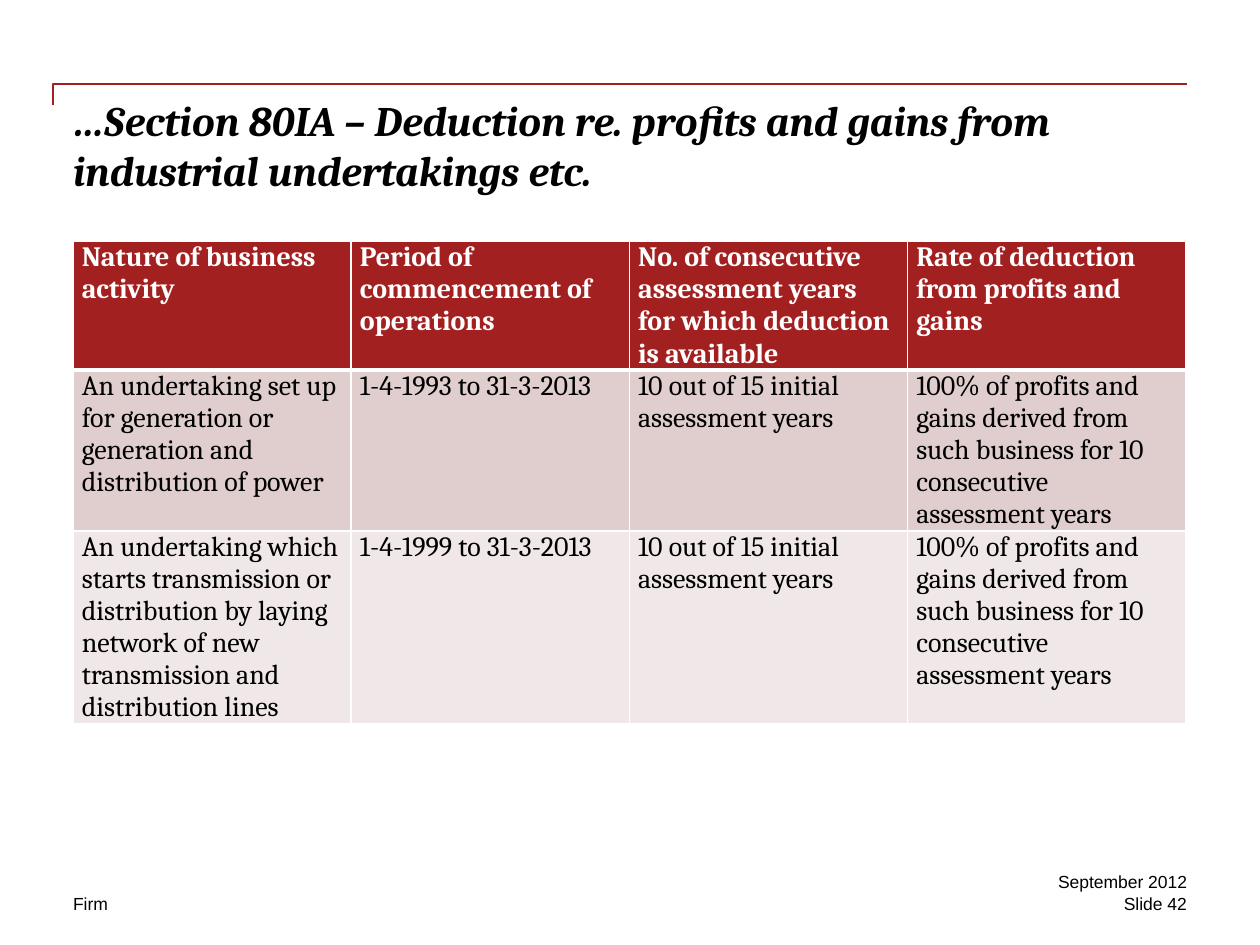
from dataclasses import dataclass

import pptx
import pptx.dml.color
import pptx.enum.text
import pptx.oxml
import pptx.oxml.ns
import pptx.util
from pptx.util import Inches

COLORS = {"red": "A32020", "rose": "E0CDCD", "pale": "F0E8E8",
          "white": "FFFFFF", "black": "000000"}
ALIGN = pptx.enum.text.PP_ALIGN
W, H = 10, 7.5

# Grid: content spans the margins, twelfths of an inch set the rows
LEFT, RIGHT = 0.58, 9.42
UNIT = 1 / 12
CONTENT_W = RIGHT - LEFT - 0.01


@dataclass
class Footer:
    text: str
    left: float
    row: int
    width: float
    align: ALIGN


@dataclass
class RowStyle:
    fill: str
    color: str
    bold: bool
    top: int
    bottom: int


FOOTERS = [
    Footer("Firm", LEFT, 85, 2.83, ALIGN.LEFT),
    Footer("Slide 42", 7.75, 85, 1.67, ALIGN.RIGHT),
    Footer("September 2012", 7.75, 83, 1.67, ALIGN.RIGHT),
]

YEARS = "10 out of 15 initial assessment years"
RATE = ("100% of profits and gains derived from such business "
        "for 10 consecutive assessment years")
ROWS = [
    ["Nature of business activity",
     "Period of commencement of operations",
     "No. of consecutive assessment years for which deduction is available",
     "Rate of deduction from profits and gains"],
    ["An undertaking set up for generation or generation and distribution of power",
     "1-4-1993 to 31-3-2013", YEARS, RATE],
    ["An undertaking which starts transmission or distribution by laying network "
     "of new transmission and distribution lines",
     "1-4-1999 to 31-3-2013", YEARS, RATE],
]
STYLES = [
    RowStyle("red", "white", True, 1, 3),
    RowStyle("rose", "black", False, 3, 1),
    RowStyle("pale", "black", False, 1, 1),
]


def rgb(name: str) -> pptx.dml.color.RGBColor:
    return pptx.dml.color.RGBColor.from_string(COLORS[name])


def write(tf, text: str, color: str, align=ALIGN.LEFT, **font) -> None:
    p = tf.paragraphs[0]
    p.alignment = align
    r = p.add_run()
    r.text = text
    r.font.color.rgb = rgb(color)
    for name, value in font.items():
        setattr(r.font, name, value)


def format_frame(tf) -> None:
    values = {"margin_left": 0, "margin_top": 0, "margin_right": 0, "margin_bottom": 0,
              "word_wrap": True, "vertical_anchor": pptx.enum.text.MSO_ANCHOR.TOP,
              "auto_size": pptx.enum.text.MSO_AUTO_SIZE.NONE}
    for name, value in values.items():
        setattr(tf, name, value)


def add_rule(s) -> None:
    x, y = 0.42, 8 * UNIT
    builder = s.shapes.build_freeform(Inches(x), Inches(y + 2 * UNIT))
    builder.add_line_segments([(Inches(x), Inches(y)), (Inches(RIGHT), Inches(y))],
                              close=False)
    sp = builder.convert_to_shape()
    sp.shadow.inherit = False
    sp.fill.background()
    sp.line.color.rgb = rgb("red")
    sp.line.width = pptx.util.Pt(1)


def add_title(s, text: str) -> None:
    sp = s.shapes.title
    box = {"left": LEFT, "top": 9 * UNIT, "width": CONTENT_W, "height": 1}
    for name, value in box.items():
        setattr(sp, name, Inches(value))
    format_frame(sp.text_frame)
    write(sp.text_frame, text, "black", name="Cambria", size=pptx.util.Pt(24),
          bold=True, italic=True)


def add_footer(s, item: Footer) -> None:
    sp = s.shapes.add_textbox(Inches(item.left), Inches(item.row * UNIT),
                              Inches(item.width), Inches(2 * UNIT))
    format_frame(sp.text_frame)
    write(sp.text_frame, item.text, "black", item.align, name="Arial",
          size=pptx.util.Pt(10))


def add_borders(cell, style: RowStyle) -> None:
    tc_pr = cell._tc.get_or_add_tcPr()
    widths = {"lnL": 1, "lnR": 1, "lnT": style.top, "lnB": style.bottom}
    for tag, points in widths.items():
        tc_pr.append(pptx.oxml.parse_xml(
            f'<a:{tag} {pptx.oxml.ns.nsdecls("a")} w="{pptx.util.Pt(points)}">'
            f'<a:solidFill><a:srgbClr val="{COLORS["white"]}"/></a:solidFill></a:{tag}>'))


def fill_cell(cell, text: str, style: RowStyle) -> None:
    margins = {"margin_left": 0.07, "margin_right": 0.07,
               "margin_top": 0, "margin_bottom": 0}
    for name, value in margins.items():
        setattr(cell, name, Inches(value))
    add_borders(cell, style)
    cell.fill.solid()
    cell.fill.fore_color.rgb = rgb(style.fill)
    write(cell.text_frame, text, style.color, name="Cambria",
          size=pptx.util.Pt(16), bold=style.bold)


def add_deductions(s) -> None:
    # Rows start at a minimum height and grow with their text
    table = s.shapes.add_table(len(ROWS), len(ROWS[0]), Inches(LEFT), Inches(23 * UNIT),
                               Inches(CONTENT_W), Inches(0.41 * len(ROWS))).table
    for i, (texts, style) in enumerate(zip(ROWS, STYLES)):
        for j, text in enumerate(texts):
            fill_cell(table.cell(i, j), text, style)


def main() -> None:
    prs = pptx.Presentation()
    prs.slide_width, prs.slide_height = Inches(W), Inches(H)
    s = prs.slides.add_slide(prs.slide_layouts.get_by_name("Title Only"))

    # Heading
    add_rule(s)
    add_title(s, "…Section 80IA – Deduction re. profits and gains "
                 "from industrial undertakings etc.")

    # Table of deductions
    add_deductions(s)

    # Footer
    for item in FOOTERS:
        add_footer(s, item)

    prs.save("out.pptx")


if __name__ == "__main__":
    main()
